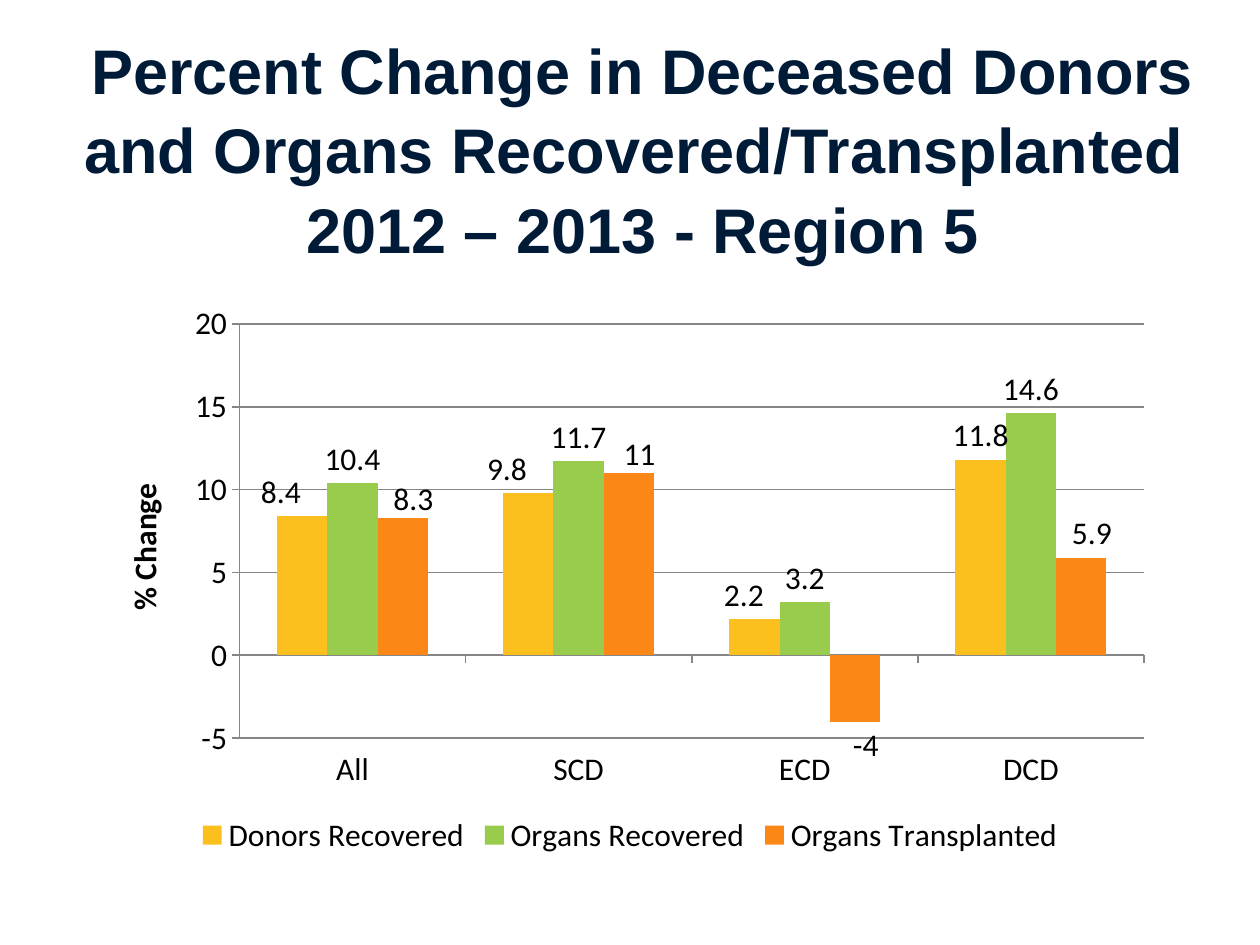
"""Build the Region 5 slide on percent change in donors and organs."""
import pptx
import pptx.chart.data
import pptx.dml.color
import pptx.enum.chart
import pptx.enum.text
import pptx.oxml
import pptx.oxml.ns
import pptx.util

Inches, Pt = pptx.util.Inches, pptx.util.Pt
enum = pptx.enum.chart
RGB = pptx.dml.color.RGBColor.from_string
COLORS = {"title": "001B37", "text": "000000", "grid": "868686",
          "gold": "FBC01E", "green": "99CC4C", "orange": "FA8716"}
WIDE, HIGH = 8.5, 4.5


def layout(**places):
    items = "".join(f'<c:{key} val="{val}"/>' for key, val in places.items())
    space = pptx.oxml.ns.nsdecls("c")
    return pptx.oxml.parse_xml(
        f"<c:layout {space}><c:manualLayout>{items}</c:manualLayout></c:layout>")


deck = pptx.Presentation()
deck.slide_width, deck.slide_height = Inches(10), Inches(7.5)
slide = deck.slides.add_slide(deck.slide_layouts[5])

title = slide.shapes.title
title.left, title.top = Inches(0.32), Inches(0.17)
title.width, title.height = Inches(9.56), Inches(0.93)
frame = title.text_frame
frame.text = ("Percent Change in Deceased Donors and Organs "
              "Recovered/Transplanted \v2012 – 2013 - Region 5")
frame.word_wrap = True
frame.auto_size = pptx.enum.text.MSO_AUTO_SIZE.NONE
frame.vertical_anchor = pptx.enum.text.MSO_ANCHOR.TOP
head = frame.paragraphs[0]
head.alignment = pptx.enum.text.PP_ALIGN.CENTER
head.line_spacing = 1.05
head.font.name, head.font.size, head.font.bold = "Arial", Pt(36), True
head.font.color.rgb = RGB(COLORS["title"])

SERIES = [
    ("Donors Recovered", "gold", (8.4, 9.8, 2.2, 11.8),
     {0: (-0.02, 0), 1: (-0.02, 0), 2: (-0.01, 0)}),
    ("Organs Recovered", "green", (10.4, 11.7, 3.2, 14.6), {}),
    ("Organs Transplanted", "orange", (8.3, 11, -4, 5.9),
     {0: (0.01, 0.01), 1: (0.01, 0.01), 2: (0.01, 0), 3: (0.01, 0)}),
]
data = pptx.chart.data.CategoryChartData()
data.categories = ["All", "SCD", "ECD", "DCD"]
for name, color, values, shifts in SERIES:
    data.add_series(name, values)
chart = slide.shapes.add_chart(
    enum.XL_CHART_TYPE.COLUMN_CLUSTERED, Inches(0.75), Inches(2.33),
    Inches(WIDE), Inches(HIGH), data).chart
chart.has_title = False
chart.font.name, chart.font.size = "Calibri", Pt(18)
chart.font.color.rgb = RGB(COLORS["text"])
chart.has_legend = True
chart.legend.position = enum.XL_LEGEND_POSITION.BOTTOM
chart.legend.include_in_layout = False

plot = chart.plots[0]
plot.gap_width, plot.overlap, plot.vary_by_categories = 150, 0, False
for series, (name, color, values, shifts) in zip(plot.series, SERIES):
    series.format.fill.solid()
    series.format.fill.fore_color.rgb = RGB(COLORS[color])
    series.invert_if_negative = False
    labels = series.data_labels
    labels.show_value = True
    labels.position = enum.XL_LABEL_POSITION.OUTSIDE_END
    for index, (right, down) in shifts.items():
        label = series.points[index].data_label
        label.position = enum.XL_LABEL_POSITION.OUTSIDE_END
    for node, (right, down) in zip(
            series.data_labels._element.findall(pptx.oxml.ns.qn("c:dLbl")),
            shifts.values()):
        node.insert(1, layout(x=right, y=down))

cats, vals = chart.category_axis, chart.value_axis
cats.tick_label_position = enum.XL_TICK_LABEL_POSITION.LOW
vals.minimum_scale, vals.maximum_scale, vals.major_unit = -5, 20, 5
vals.has_major_gridlines = True
for axis in (cats, vals):
    axis.major_tick_mark = enum.XL_TICK_MARK.OUTSIDE
    axis.minor_tick_mark = enum.XL_TICK_MARK.NONE
for part in (cats, vals, vals.major_gridlines):
    part.format.line.width = Pt(1)
    part.format.line.color.rgb = RGB(COLORS["grid"])
note = vals.axis_title.text_frame
note.text = "% Change"
font = note.paragraphs[0].font
font.name, font.size, font.bold = "Calibri", Pt(18), True
font.color.rgb = RGB(COLORS["text"])

area = chart._chartSpace.chart.plotArea
for old in area.findall(pptx.oxml.ns.qn("c:layout")):
    area.remove(old)
area.insert(0, layout(
    layoutTarget="inner", xMode="edge", yMode="edge",
    x=1.15 / WIDE, y=0.24 / HIGH, w=7.18 / WIDE, h=3.29 / HIGH))

deck.save("out.pptx")
